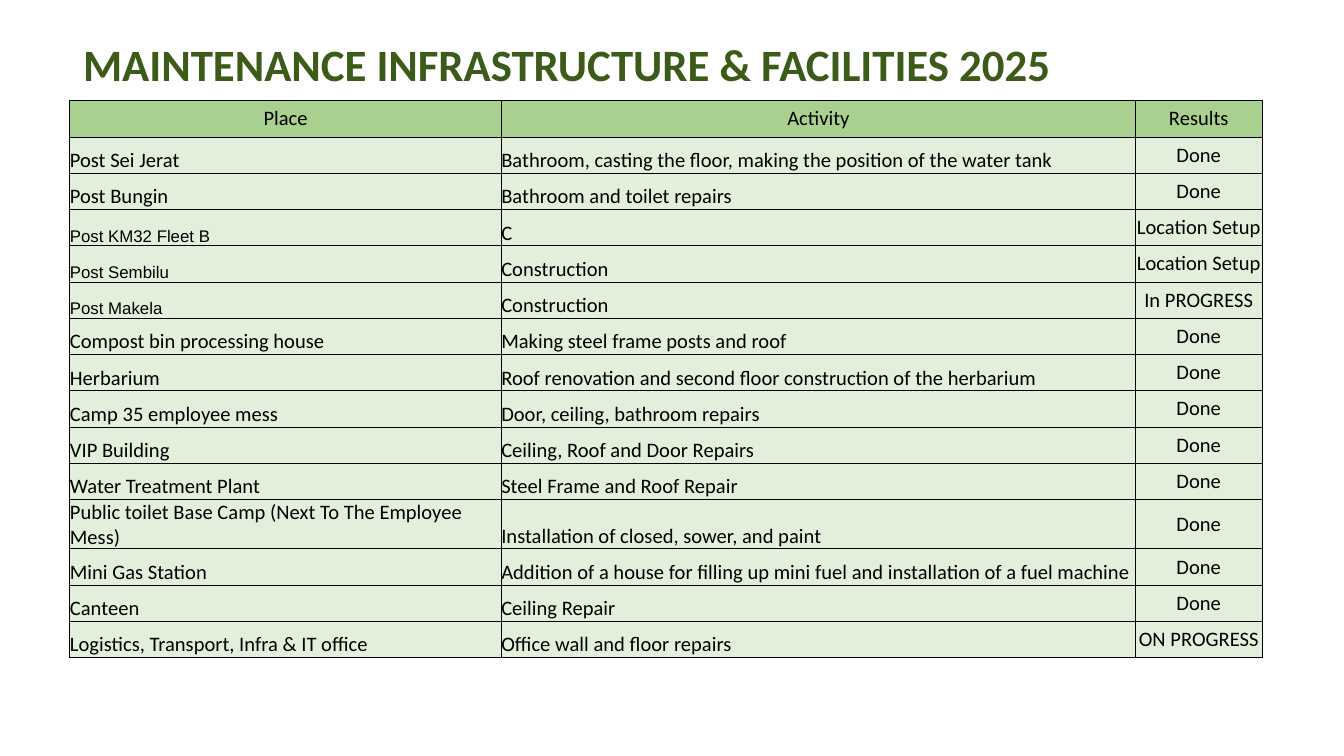
"""Build the slide on maintenance of infrastructure and facilities in 2025."""
from lxml.etree import SubElement
from pptx import Presentation
from pptx.dml.color import RGBColor
from pptx.enum.text import MSO_ANCHOR, PP_ALIGN
from pptx.oxml.ns import qn
from pptx.util import Inches, Pt

BLACK = RGBColor(0x00, 0x00, 0x00)
FOREST = RGBColor(0x3C, 0x5B, 0x19)
GREEN = RGBColor(0xA9, 0xD0, 0x8E)
PALE = RGBColor(0xE2, 0xEF, 0xDA)

HEAD = ("Place", "Activity", "Results")
ROWS = [
    ("Post Sei Jerat", "Bathroom, casting the floor, making the position of the water tank", "Done"),
    ("Post Bungin", "Bathroom and toilet repairs", "Done"),
    ("Post KM32 Fleet B", "C", "Location Setup"),
    ("Post Sembilu", "Construction", "Location Setup"),
    ("Post Makela", "Construction", "In PROGRESS"),
    ("Compost bin processing house", "Making steel frame posts and roof", "Done"),
    ("Herbarium", "Roof renovation and second floor construction of the herbarium", "Done"),
    ("Camp 35 employee mess", "Door, ceiling, bathroom repairs", "Done"),
    ("VIP Building", "Ceiling, Roof and Door Repairs", "Done"),
    ("Water Treatment Plant", "Steel Frame and Roof Repair", "Done"),
    ("Public toilet Base Camp (Next To The Employee Mess)", "Installation of closed, sower, and paint", "Done"),
    ("Mini Gas Station", "Addition of a house for filling up mini fuel and installation of a fuel machine", "Done"),
    ("Canteen", "Ceiling Repair", "Done"),
    ("Logistics, Transport, Infra & IT office", "Office wall and floor repairs", "ON PROGRESS"),
]
SMALL = ("Post KM32 Fleet B", "Post Sembilu", "Post Makela")
WIDTHS = (3.21, 4.72, 0.94)
HIGH = 0.27


def write(frame, text, size=11, face="Calibri", color=BLACK, bold=False, align=PP_ALIGN.LEFT):
    para = frame.paragraphs[0]
    para.alignment = align
    run = para.add_run()
    run.text = text
    run.font.size = Pt(size)
    run.font.name = face
    run.font.bold = bold
    run.font.color.rgb = color


def border(cell):
    props = cell._tc.get_or_add_tcPr()
    for side in ("lnL", "lnR", "lnT", "lnB"):
        line = SubElement(props, qn(f"a:{side}"), w=str(Pt(0.5)))
        fill = SubElement(line, qn("a:solidFill"))
        SubElement(fill, qn("a:srgbClr"), val=str(BLACK))


deck = Presentation()
deck.slide_width = Inches(10)
deck.slide_height = Inches(10 * 9 / 16)
slide = deck.slides.add_slide(deck.slide_layouts[6])

title = slide.shapes.add_textbox(Inches(0.52), Inches(0), Inches(8.96), Inches(0.94))
title.text_frame.word_wrap = True
title.text_frame.vertical_anchor = MSO_ANCHOR.MIDDLE
write(title.text_frame, "MAINTENANCE INFRASTRUCTURE & FACILITIES 2025", size=24, color=FOREST, bold=True)

count = len(ROWS) + 1
frame = slide.shapes.add_table(
    count, len(HEAD), Inches(0.52), Inches(0.75), Inches(sum(WIDTHS)), Inches(HIGH * count)
)
table = frame.table
table.first_row = False
table.horz_banding = False
for col, width in zip(table.columns, WIDTHS):
    col.width = Inches(width)

for r, texts in enumerate([HEAD] + ROWS):
    table.rows[r].height = Inches(HIGH)
    for c, text in enumerate(texts):
        cell = table.cell(r, c)
        cell.margin_left = cell.margin_right = cell.margin_top = cell.margin_bottom = Inches(0)
        border(cell)
        cell.fill.solid()
        cell.fill.fore_color.rgb = PALE if r else GREEN
        mid = r == 0 or c == 2
        cell.vertical_anchor = MSO_ANCHOR.MIDDLE if mid else MSO_ANCHOR.BOTTOM
        small = text in SMALL
        write(
            cell.text_frame,
            text,
            size=9 if small else 11,
            face="Arial" if small else "Calibri",
            align=PP_ALIGN.CENTER if mid else PP_ALIGN.LEFT,
        )

deck.save("out.pptx")
